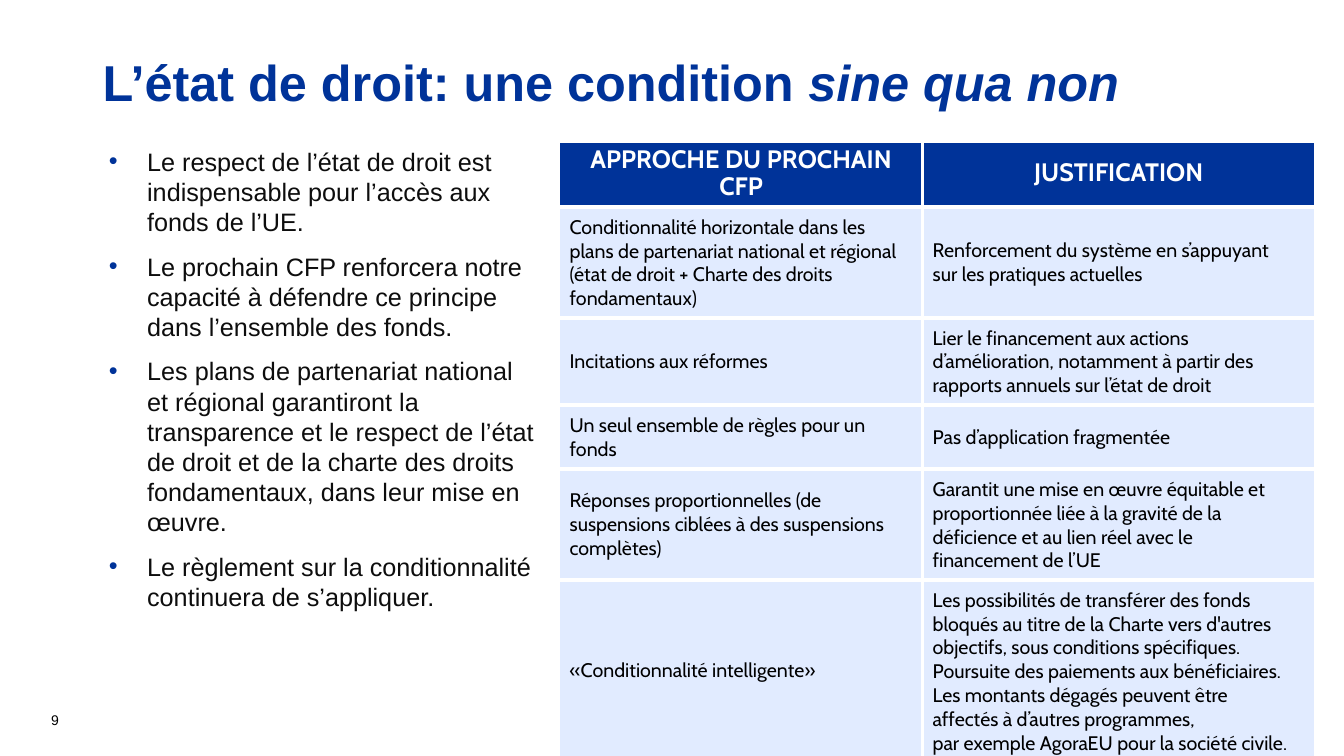
from copy import deepcopy

from lxml import etree
from pptx import Presentation
from pptx.dml.color import RGBColor
from pptx.enum.shapes import MSO_SHAPE
from pptx.enum.text import MSO_ANCHOR, PP_ALIGN
from pptx.oxml.ns import qn
from pptx.util import Inches, Pt

RECTANGLE = MSO_SHAPE.RECTANGLE
MIDDLE, BOTTOM = MSO_ANCHOR.MIDDLE, MSO_ANCHOR.BOTTOM
LEFT, CENTER = PP_ALIGN.LEFT, PP_ALIGN.CENTER
BLUE, PALE, WHITE, BLACK, DARK = "003399", "E1EBFF", "FFFFFF", "000000", "0D0D0D"
BULLET_INDENT = Inches(0.38)

POINTS = [
    "Le respect de l’état de droit est indispensable pour l’accès aux fonds de l’UE.",
    "Le prochain CFP renforcera notre capacité à défendre ce principe dans l’ensemble des fonds.",
    "Les plans de partenariat national et régional garantiront la transparence et le respect "
    "de l’état de droit et de la charte des droits fondamentaux, dans leur mise en œuvre.",
    "Le règlement sur la conditionnalité continuera de s’appliquer.",
]
HEADINGS = ["APPROCHE DU PROCHAIN CFP", "JUSTIFICATION"]
MEASURES = [
    (["Conditionnalité horizontale dans les plans de partenariat national et régional \n"
      "(état de droit + Charte des droits fondamentaux)"],
     ["Renforcement du système en s’appuyant \nsur les pratiques actuelles"]),
    (["Incitations aux réformes"],
     ["Lier le financement aux actions d’amélioration, notamment à partir des rapports "
      "annuels sur l’état de droit"]),
    (["Un seul ensemble de règles pour un fonds"],
     ["Pas d’application fragmentée"]),
    (["Réponses proportionnelles (de suspensions ciblées à des suspensions complètes)"],
     ["Garantit une mise en œuvre équitable et proportionnée liée à la gravité de la "
      "déficience et au lien réel avec le \nfinancement de l’UE"]),
    (["«Conditionnalité intelligente»"],
     ["Les possibilités de transférer des fonds bloqués au titre de la Charte vers d'autres "
      "objectifs, sous conditions spécifiques.",
      "Poursuite des paiements aux bénéficiaires.\nLes montants dégagés peuvent être \n"
      "affectés à d’autres programmes, \npar exemple AgoraEU pour la société civile."]),
]
COLUMN_WIDTHS = [3.6, 3.89]
ROW_HEIGHTS = [0.36, 0.87, 0.34, 0.34, 0.79, 1.04]


def color(value):
    return RGBColor.from_string(value)


def add_span(para, text, size=18, font="Arial", fill=BLACK, bold=False, italic=False):
    for index, line in enumerate(text.split("\n")):
        if index:
            para.add_line_break()
        span = para.add_run()
        span.text = line
        span.font.size, span.font.name = Pt(size), font
        span.font.bold, span.font.italic = bold, italic
        span.font.color.rgb = color(fill)
        if index:
            line_break = span._r.getprevious()
            line_break.append(deepcopy(span._r.find(qn("a:rPr"))))


def write_paragraphs(frame, texts, align=LEFT, spacing=None, **style):
    for index, text in enumerate(texts):
        para = frame.add_paragraph() if index else frame.paragraphs[0]
        para.alignment = align
        para.line_spacing = spacing
        add_span(para, text, **style)


def add_text_frame(page, box):
    frame = page.shapes.add_textbox(*map(Inches, box)).text_frame
    frame.word_wrap = True
    return frame


def add_title(page, box):
    banner = page.shapes.add_shape(RECTANGLE, *map(Inches, box))
    banner.shadow.inherit = False
    banner.fill.solid()
    banner.fill.fore_color.rgb = color(WHITE)
    banner.line.fill.background()
    banner.text_frame.word_wrap = True
    banner.text_frame.vertical_anchor = MIDDLE
    para = banner.text_frame.paragraphs[0]
    para.alignment = LEFT
    para.line_spacing = 0.9
    add_span(para, "L’état de droit: une condition", size=36, fill=BLUE, bold=True)
    add_span(para, " sine qua non", size=36, fill=BLUE, bold=True, italic=True)


def add_bullet(para):
    properties = para._p.get_or_add_pPr()
    properties.set("marL", str(BULLET_INDENT))
    properties.set("indent", str(-BULLET_INDENT))
    bullet_color = etree.SubElement(properties, qn("a:buClr"))
    etree.SubElement(bullet_color, qn("a:srgbClr")).set("val", BLUE)
    etree.SubElement(properties, qn("a:buFont")).set("typeface", "Arial")
    etree.SubElement(properties, qn("a:buChar")).set("char", "•")


def add_points(page, box):
    frame = add_text_frame(page, box)
    frame.margin_left = frame.margin_right = Inches(0.16)
    frame.margin_top = frame.margin_bottom = Inches(0.16)
    write_paragraphs(frame, POINTS, fill=DARK)
    for index, para in enumerate(frame.paragraphs):
        para.space_before = Pt(10 if index else 0)
        add_bullet(para)


def add_borders(cell, sides):
    properties = cell._tc.get_or_add_tcPr()
    for side in sides:
        line = etree.SubElement(properties, qn(f"a:ln{side}"), w=str(Pt(3)))
        fill = etree.SubElement(line, qn("a:solidFill"))
        etree.SubElement(fill, qn("a:srgbClr")).set("val", WHITE)


def fill_cell(cell, texts, sides, background, margin=Inches(0.05), **style):
    add_borders(cell, sides)
    cell.fill.solid()
    cell.fill.fore_color.rgb = color(background)
    cell.vertical_anchor = MIDDLE
    cell.margin_top = cell.margin_bottom = margin
    write_paragraphs(cell.text_frame, texts, font="Cabin", **style)


def add_measures(page, box):
    table = page.shapes.add_table(len(ROW_HEIGHTS), len(COLUMN_WIDTHS), *map(Inches, box)).table
    table.horz_banding = False
    for column, width in zip(table.columns, COLUMN_WIDTHS):
        column.width = Inches(width)
    for row, height in zip(table.rows, ROW_HEIGHTS):
        row.height = Inches(height)
    for index, heading in enumerate(HEADINGS):
        side = "L" if index else "R"
        fill_cell(table.cell(0, index), [heading], [side, "B"], BLUE,
                  align=CENTER, spacing=Pt(19.5), fill=WHITE, bold=True)
    for row, measure in enumerate(MEASURES, start=1):
        edges = ["T", "B"] if row < len(MEASURES) else ["T"]
        for index, texts in enumerate(measure):
            side = "L" if index else "R"
            fill_cell(table.cell(row, index), texts, [side, *edges], PALE,
                      margin=Pt(6), size=14)


def add_page_number(page, box):
    frame = add_text_frame(page, box)
    frame.vertical_anchor = BOTTOM
    write_paragraphs(frame, ["9"], size=10)


def main():
    deck = Presentation()
    deck.slide_width, deck.slide_height = Inches(13.33), Inches(7.5)
    page = deck.slides.add_slide(deck.slide_layouts[6])
    add_title(page, (0.92, 0.4, 11.9, 0.89))
    add_points(page, (0.92, 1.29, 4.57, 4.2))
    add_measures(page, (5.55, 1.41, sum(COLUMN_WIDTHS), sum(ROW_HEIGHTS)))
    add_page_number(page, (0.41, 6.87, 3, 0.4))
    deck.save("out.pptx")


if __name__ == "__main__":
    main()
